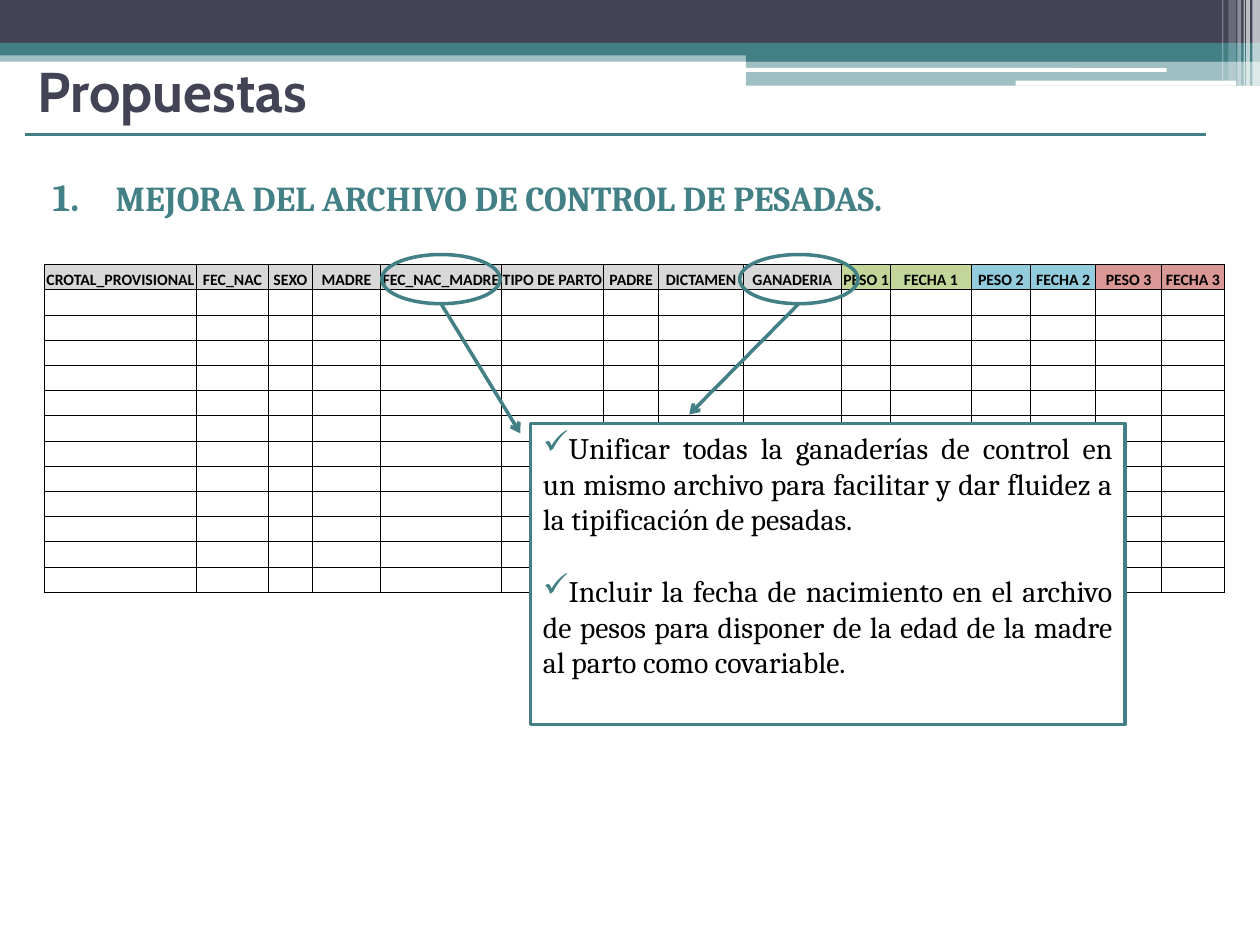
from lxml import etree
from pptx import Presentation
from pptx.dml.color import RGBColor
from pptx.enum import shapes, text
from pptx.oxml import ns
from pptx.util import Inches, Pt

NAVY = RGBColor(0x42, 0x44, 0x56)
TEAL = RGBColor(0x43, 0x80, 0x86)
WHITE = RGBColor(0xFF, 0xFF, 0xFF)
BLACK = RGBColor(0, 0, 0)
GREY = RGBColor(0xD8, 0xD8, 0xD8)
GREEN = RGBColor(0xC2, 0xD6, 0x9A)
BLUE = RGBColor(0x93, 0xCD, 0xDD)
RED = RGBColor(0xD9, 0x97, 0x95)

RECT = shapes.MSO_SHAPE.RECTANGLE
ROUND = shapes.MSO_SHAPE.ROUNDED_RECTANGLE
OVAL = shapes.MSO_SHAPE.OVAL

# left, top, width, height, colour, opacity in percent
BANDS = [
    (0, 0.4, 10, 0.09, TEAL, 50),
    (0, 0, 10, 0.34, NAVY, 100),
    (0, 0.34, 10, 0.1, TEAL, 100),
    (5.92, 0.39, 4.08, 0.1, TEAL, 100),
    (5.92, 0.48, 4.08, 0.2, TEAL, 50),
]
HIGHLIGHTS = [(5.91, 0.54, 3.35, 0.03), (8.06, 0.64, 1.75, 0.04)]
# left, width, height, opacity in percent
STRIPES = [
    (9.94, 0.06, 0.68, 65),
    (9.89, 0.03, 0.68, 65),
    (9.87, 0.01, 0.68, 60),
    (9.82, 0.03, 0.68, 40),
    (9.75, 0.06, 0.64, 20),
    (9.7, 0.01, 0.64, 30),
]
COLUMNS = [
    ("CROTAL_PROVISIONAL", 1.21, GREY),
    ("FEC_NAC", 0.57, GREY),
    ("SEXO", 0.35, GREY),
    ("MADRE", 0.54, GREY),
    ("FEC_NAC_MADRE", 0.96, GREY),
    ("TIPO DE PARTO", 0.81, GREY),
    ("PADRE", 0.44, GREY),
    ("DICTAMEN", 0.67, GREY),
    ("GANADERIA", 0.78, GREY),
    ("PESO 1", 0.39, GREEN),
    ("FECHA 1", 0.64, GREEN),
    ("PESO 2", 0.47, BLUE),
    ("FECHA 2", 0.52, BLUE),
    ("PESO 3", 0.52, RED),
    ("FECHA 3", 0.5, RED),
]
ROWS, ROW_HEIGHT = 13, 0.2
PROPOSALS = [
    "Unificar todas la ganaderías de control en un mismo archivo para "
    "facilitar y dar fluidez a la tipificación de pesadas. ",
    "Incluir la fecha de nacimiento en el archivo de pesos para disponer "
    "de la edad de la madre al parto como covariable.",
]


def child(parent, tag, **attributes):
    return etree.SubElement(parent, ns.qn(tag), attributes)


def add_figure(slide, kind, box, fill=None, opacity=100, outline=None):
    figure = slide.shapes.add_shape(kind, *map(Inches, box))
    figure.shadow.inherit = False
    if fill is None:
        figure.fill.background()
    else:
        figure.fill.solid()
        figure.fill.fore_color.rgb = fill
    if opacity < 100:
        colour = figure.fill._xPr.find(".//" + ns.qn("a:srgbClr"))
        child(colour, "a:alpha", val=str(opacity * 1000))
    if outline is None:
        figure.line.fill.background()
    else:
        figure.line.color.rgb = outline
        figure.line.width = Pt(2)
    return figure


def add_line(slide, start, end, width, arrow=False):
    line = slide.shapes.add_connector(
        shapes.MSO_CONNECTOR.STRAIGHT, *map(Inches, start + end))
    line.line.color.rgb = TEAL
    line.line.width = Pt(width)
    if arrow:
        child(line.line._get_or_add_ln(), "a:tailEnd", type="arrow")
    child(line._element.spPr, "a:effectLst")


def write(paragraph, words, size, font, color=BLACK, bold=False,
          align=text.PP_ALIGN.LEFT):
    paragraph.alignment = align
    run = paragraph.add_run()
    run.text = words
    run.font.size = Pt(size)
    run.font.name = font
    run.font.bold = bold
    run.font.color.rgb = color


def add_bullet(paragraph, tag, left=0, hanging=0, **mark):
    """Put a teal number or character before the paragraph."""
    properties = paragraph._p.get_or_add_pPr()
    properties.set("marL", str(Inches(left)))
    properties.set("indent", str(-Inches(hanging)))
    child(child(properties, "a:buClr"), "a:srgbClr", val=str(TEAL))
    child(properties, "a:buSzPct", val="110000")
    child(properties, tag, **mark)


def add_text_box(slide, box, anchor):
    frame = slide.shapes.add_textbox(*map(Inches, box)).text_frame
    frame.word_wrap = True
    frame.vertical_anchor = anchor
    return frame.paragraphs[0]


def add_borders(cell):
    properties = cell._tc.get_or_add_tcPr()
    for side in ("a:lnL", "a:lnR", "a:lnT", "a:lnB"):
        border = child(properties, side, w=str(Pt(0.5)))
        child(child(border, "a:solidFill"), "a:srgbClr", val=str(BLACK))


def add_weighing_table(slide):
    width = sum(column[1] for column in COLUMNS)
    table = slide.shapes.add_table(
        ROWS, len(COLUMNS), Inches(0.35), Inches(2.1),
        Inches(width), Inches(ROWS * ROW_HEIGHT)).table
    table.first_row = table.horz_banding = False
    for row in table.rows:
        row.height = Inches(ROW_HEIGHT)
    for index, (heading, width, color) in enumerate(COLUMNS):
        table.columns[index].width = Inches(width)
        for row in range(ROWS):
            cell = table.cell(row, index)
            cell.margin_left = cell.margin_right = 0
            cell.margin_top = cell.margin_bottom = 0
            cell.vertical_anchor = text.MSO_ANCHOR.BOTTOM
            add_borders(cell)
            paragraph = cell.text_frame.paragraphs[0]
            if row == 0:
                cell.fill.solid()
                cell.fill.fore_color.rgb = color
                write(paragraph, heading, 9, "Calibri", bold=True,
                      align=text.PP_ALIGN.CENTER)
            else:
                cell.fill.background()
                child(paragraph._p, "a:endParaRPr", sz="900")


def add_header(slide):
    for *box, color, opacity in BANDS:
        add_figure(slide, RECT, box, color, opacity)
    for box in HIGHLIGHTS:
        add_figure(slide, ROUND, box, WHITE)
    for left, width, height, opacity in STRIPES:
        add_figure(slide, RECT, (left, 0, width, height), WHITE, opacity)
    title = add_text_box(slide, (0.2, 0.13, 9.06, 1.17), text.MSO_ANCHOR.MIDDLE)
    write(title, "Propuestas", 32, "Cabin", NAVY, bold=True)
    add_line(slide, (0.2, 1.07), (9.57, 1.07), 1.75)


def add_callout(slide):
    callout = add_figure(slide, RECT, (4.21, 3.36, 4.72, 2.39), WHITE,
                         outline=TEAL)
    frame = callout.text_frame
    frame.word_wrap = True
    frame.vertical_anchor = text.MSO_ANCHOR.TOP
    for index, proposal in enumerate(PROPOSALS):
        paragraph = frame.add_paragraph() if index else frame.paragraphs[0]
        paragraph.space_before = Pt(20.5 if index else 0)
        write(paragraph, proposal, 17, "Cambria", align=text.PP_ALIGN.JUSTIFY)
        add_bullet(paragraph, "a:buChar", char="✓")


def main():
    deck = Presentation()
    deck.slide_width, deck.slide_height = Inches(10), Inches(7.5)
    slide = deck.slides.add_slide(deck.slide_layouts[6])
    add_header(slide)
    heading = add_text_box(slide, (0.2, 1.35, 9.37, 0.43), text.MSO_ANCHOR.TOP)
    write(heading, "MEJORA DEL ARCHIVO DE CONTROL DE PESADAS.", 20, "Cambria",
          TEAL, bold=True, align=text.PP_ALIGN.JUSTIFY)
    add_bullet(heading, "a:buAutoNum", 0.62, 0.5, type="arabicPeriod")
    add_weighing_table(slide)
    add_callout(slide)
    for left, tip in ((3.03, (4.13, 3.44)), (5.87, (5.47, 3.29))):
        add_figure(slide, OVAL, (left, 2.02, 0.94, 0.39), outline=TEAL)
        add_line(slide, (left + 0.47, 2.41), tip, 2, arrow=True)
    deck.save("out.pptx")


if __name__ == "__main__":
    main()
